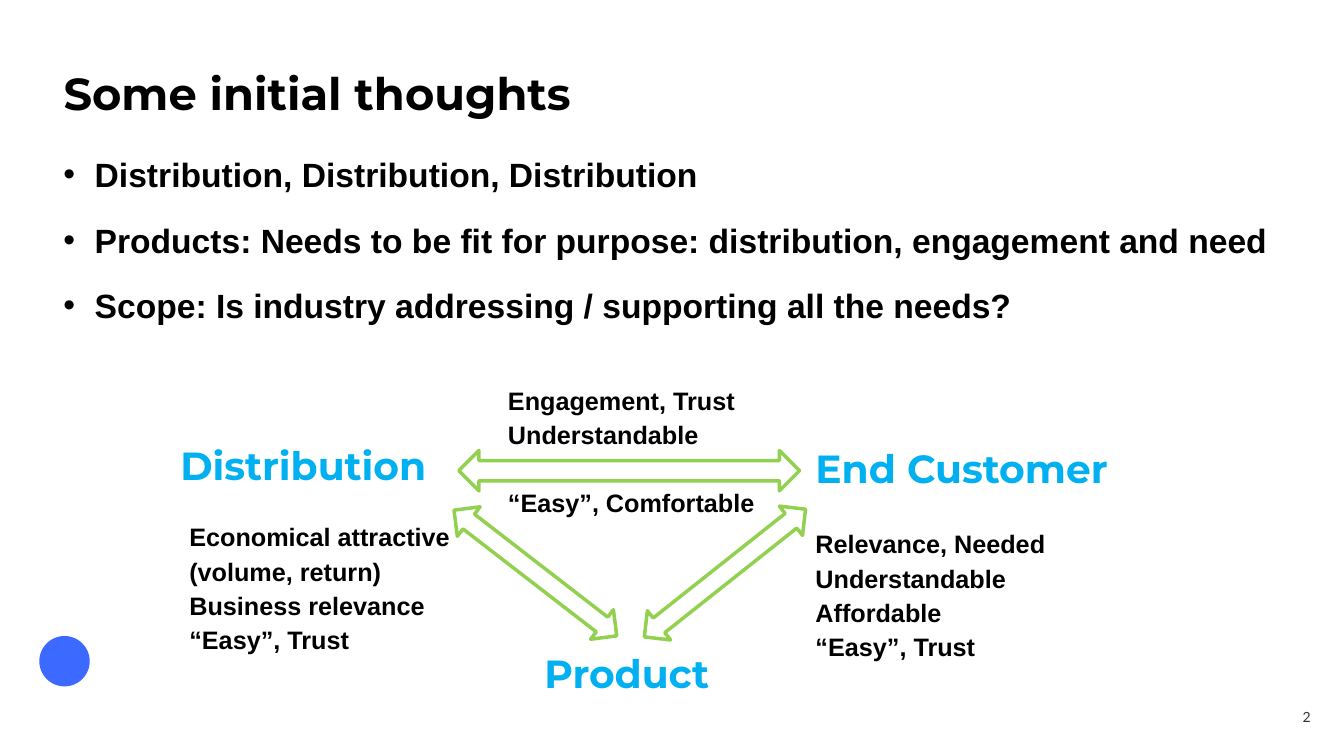
from lxml import etree
from pptx import Presentation
from pptx.dml.color import RGBColor
from pptx.enum.shapes import MSO_SHAPE
from pptx.enum.text import MSO_ANCHOR, MSO_AUTO_SIZE, PP_ALIGN
from pptx.oxml.ns import qn
from pptx.util import Inches, Pt

DOUBLE_ARROW = MSO_SHAPE.LEFT_RIGHT_ARROW
OVAL = MSO_SHAPE.OVAL
TOP, BOTTOM = MSO_ANCHOR.TOP, MSO_ANCHOR.BOTTOM
LEFT, RIGHT = PP_ALIGN.LEFT, PP_ALIGN.RIGHT
NO_AUTOFIT = MSO_AUTO_SIZE.NONE

COLORS = {"text": "000000", "node": "00B0F0", "arrow": "92D050",
          "emblem": "3C69FF", "number": "323232"}

BULLETS = [
    "Distribution, Distribution, Distribution",
    "Products: Needs to be fit for purpose: distribution, engagement and need",
    "Scope: Is industry addressing / supporting all the needs?",
]

# Offsets and sizes in inches, measured from the diagram's top left corner
NODES = [
    ("Distribution", 0, 0.57, 3, 0.54),
    ("Product", 3.61, 2.64, 2.27, 0.54),
    ("End Customer", 6.3, 0.6, 4.03, 0.54),
]
ARROWS = [
    (2.86, 0.66, 3.38, 0.4, 0),
    (2.6, 1.69, 2.04, 0.37, 37.7),
    (4.48, 1.69, 2.04, 0.37, 141.6),
]
NOTES = [
    (["Relevance, Needed", "Understandable", "Affordable", "“Easy”, Trust"],
     6.3, 1.42, 2.83, 1.5),
    (["Economical attractive", "(volume, return)", "Business relevance",
      "“Easy”, Trust"], 0.09, 1.35, 3.07, 1.29),
    (["Engagement, Trust", "Understandable", "“Easy”, Comfortable"],
     3.25, 0, 2.84, 1.24),
]
NOTE_SPACE = 5
ARROW_GAP = 29  # space that leaves room for the horizontal arrow


def rgb(name):
    return RGBColor.from_string(COLORS[name])


def format_font(font, name, size, color, bold=True):
    font.name, font.size, font.bold = name, Pt(size), bold
    font.color.rgb = rgb(color)


def prepare_frame(frame, inset=True, anchor=TOP):
    frame.word_wrap = True
    frame.auto_size = NO_AUTOFIT
    frame.vertical_anchor = anchor
    if not inset:
        frame.margin_left = frame.margin_right = 0
        frame.margin_top = frame.margin_bottom = 0


def add_text(slide, box, lines, font, inset=True, anchor=TOP):
    """Add a text box with one paragraph per line and return its paragraphs."""
    frame = slide.shapes.add_textbox(*map(Inches, box)).text_frame
    prepare_frame(frame, inset, anchor)
    frame.text = "\n".join(lines)
    for paragraph in frame.paragraphs:
        format_font(paragraph.runs[0].font, *font)
    return frame.paragraphs


def add_title(slide, box):
    title = slide.shapes.title
    title.left, title.top, title.width, title.height = map(Inches, box)
    prepare_frame(title.text_frame, inset=False)
    title.text_frame.text = "Some initial thoughts"
    paragraph = title.text_frame.paragraphs[0]
    paragraph.alignment, paragraph.line_spacing = LEFT, 0.9
    format_font(paragraph.runs[0].font, "Montserrat", 32, "text")


def add_bullets(slide, box):
    paragraphs = add_text(slide, box, BULLETS, ("Arial", 24, "text"), inset=False)
    for index, paragraph in enumerate(paragraphs):
        paragraph.space_before = Pt(18 if index else 0)
        properties = paragraph._p.get_or_add_pPr()
        properties.set("marL", str(Inches(0.31)))
        properties.set("indent", str(Inches(-0.31)))
        etree.SubElement(properties, qn("a:buFont")).set("typeface", "Arial")
        etree.SubElement(properties, qn("a:buChar")).set("char", "•")


def add_diagram(slide, box):
    left, top = box[:2]

    def space_lines(paragraphs):
        for paragraph in paragraphs:
            paragraph.line_spacing = 0.9
            paragraph.space_before = Pt(NOTE_SPACE)

    for name, x, y, width, height in NODES:
        space_lines(add_text(slide, (left + x, top + y, width, height), [name],
                             ("Montserrat", 28, "node")))

    for x, y, width, height, angle in ARROWS:
        place = map(Inches, (left + x, top + y, width, height))
        arrow = slide.shapes.add_shape(DOUBLE_ARROW, *place)
        arrow.rotation = angle
        arrow.shadow.inherit = False
        arrow.fill.background()
        arrow.line.color.rgb = rgb("arrow")
        arrow.line.width = Pt(2.5)

    for lines, x, y, width, height in NOTES:
        paragraphs = add_text(slide, (left + x, top + y, width, height), lines,
                              ("Arial", 18, "text"))
        space_lines(paragraphs)
    # The last note stands on both sides of the horizontal arrow
    paragraphs[-1].space_before = Pt(ARROW_GAP)


def add_footer(slide, emblem_box, number_box):
    emblem = slide.shapes.add_shape(OVAL, *map(Inches, emblem_box))
    emblem.shadow.inherit = False
    emblem.fill.solid()
    emblem.fill.fore_color.rgb = rgb("emblem")
    emblem.line.fill.background()

    number = add_text(slide, number_box, ["2"], ("Lato", 10, "number", False),
                      inset=False, anchor=BOTTOM)
    number[0].alignment = RIGHT


def main():
    presentation = Presentation()
    presentation.slide_width = Inches(13.33)
    presentation.slide_height = Inches(7.5)
    slide = presentation.slides.add_slide(presentation.slide_layouts[5])
    add_footer(slide, (0.39, 6.31, 0.5, 0.5), (12.54, 7, 0.46, 0.2))
    add_title(slide, (0.63, 0.71, 10.03, 0.82))
    add_bullets(slide, (0.63, 1.53, 12.2, 2.26))
    add_diagram(slide, (1.69, 3.81, 10.33, 3.18))
    presentation.save("out.pptx")


if __name__ == "__main__":
    main()
